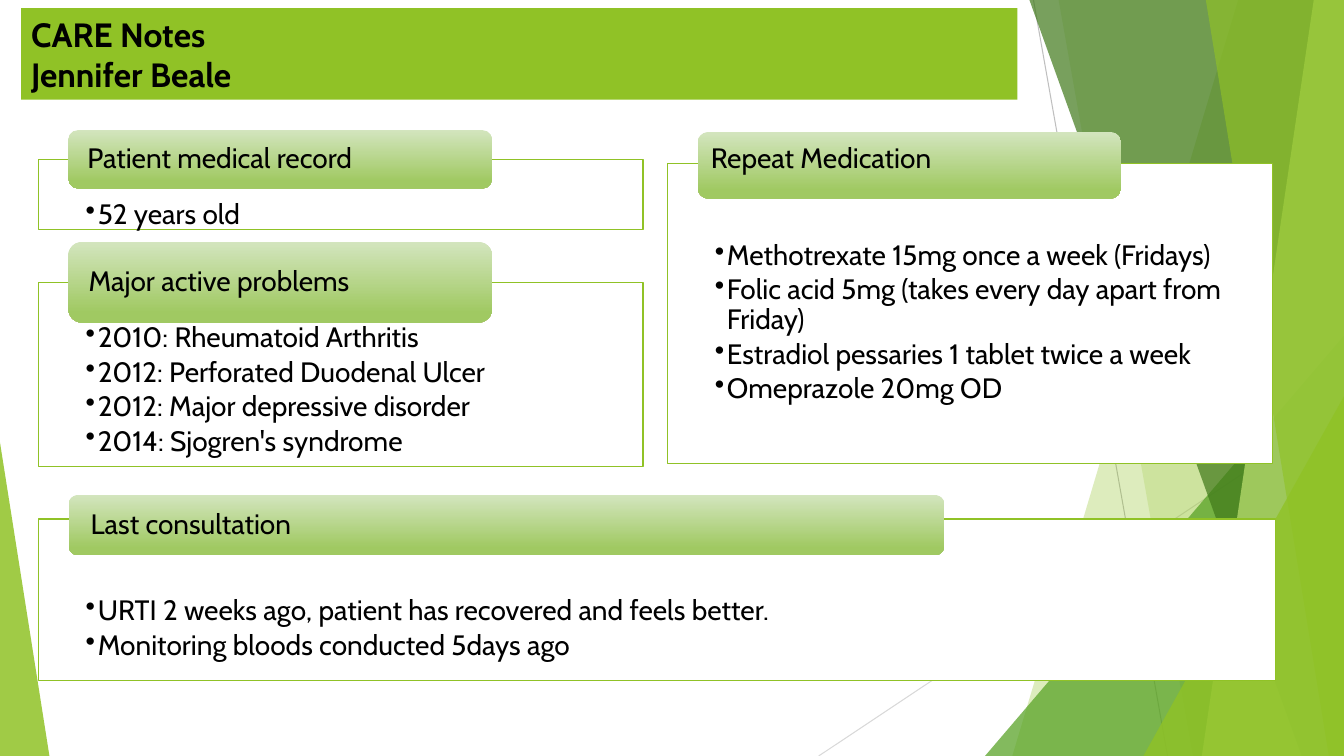
from lxml.etree import SubElement
from pptx import Presentation
from pptx.dml.color import RGBColor
from pptx.enum.shapes import MSO_CONNECTOR, MSO_SHAPE
from pptx.enum.text import MSO_ANCHOR, PP_ALIGN
from pptx.oxml.ns import qn
from pptx.util import Inches, Pt

W, H = 13.33, 7.5
FONT, GREEN, BLACK, WHITE = "Cabin", "90C226", "000000", "FFFFFF"
TITLE = ["CARE Notes", "Jennifer Beale"]

COL, STEP, COL_W, FULL_W = 0.38, 6.24, 6, 12.27
TAB_SHIFT = 0.3
PANELS = [
    dict(head="Patient medical record", box=(COL, 1.58, COL_W, 0.7), tab=(1.29, 0.58, 0.7),
         inset=0.16, gap=0.41, items=["52 years old"]),
    dict(head="Major active problems", box=(COL, 2.8, COL_W, 1.83), tab=(2.4, 0.8, 0.7),
         inset=0.16, gap=0.41,
         items=["2010: Rheumatoid Arthritis", "2012: Perforated Duodenal Ulcer",
                "2012: Major depressive disorder", "2014: Sjogren's syndrome"]),
    dict(head="Repeat Medication", box=(COL + STEP, 1.62, COL_W, 2.98), tab=(1.31, 0.66, 0.7),
         inset=0.1, gap=0.77, top=True,
         items=["Methotrexate 15mg once a week (Fridays)",
                "Folic acid 5mg (takes every day apart from Friday)",
                "Estradiol pessaries 1 tablet twice a week", "Omeprazole 20mg OD"]),
    dict(head="Last consultation", box=(COL, 5.15, FULL_W, 1.6), tab=(4.91, 0.6, 0.708),
         inset=0.19, gap=0.77,
         items=["URTI 2 weeks ago, patient has recovered and feels better.",
                "Monitoring bloods conducted 5days ago"]),
]

RAYS = [((10.25, 0), (11.58, H), "BFBFBF"), ((W, 4.03), (8.12, H), "D9D9D9")]
# Each facet: kind, geometry, colour, opacity in percent
FACETS = [
    ("band", (12.28, 10.04), GREEN, 30),
    ("band", (10.5, 11.83), GREEN, 20),
    ("triangle", (9.77, 3.33, 1), "54A021", 72),
    ("band", (10.21, 12.91), "3F7819", 70),
    ("band", (13.03, 11.92), "C0E474", 70),
    ("band", (11.96, 13.18), GREEN, 65),
    ("triangle", (11.34, 3.93, 1), GREEN, 80),
    ("triangle", (0, 4.39, 0), GREEN, 85),
]
LEFT_WEDGE_W = 0.49


def rgb(value):
    return RGBColor.from_string(value)


def paint(sp, fill, line=None, opacity=100):
    sp.shadow.inherit = False
    sp.fill.solid()
    sp.fill.fore_color.rgb = rgb(fill)
    if opacity < 100:
        color = sp._element.spPr.find(qn("a:solidFill"))[0]
        SubElement(color, qn("a:alpha"), val=str(opacity * 1000))
    if line:
        sp.line.color.rgb = rgb(line)
        sp.line.width = Pt(1)
    else:
        sp.line.fill.background()


def add_box(s, kind, x, y, w, h):
    return s.shapes.add_shape(kind, Inches(x), Inches(y), Inches(w), Inches(h))


def write(sp, lines, size, insets, anchor, bold=False, spacing=None, after=0, bullet=False):
    tf = sp.text_frame
    tf.word_wrap = True
    tf.vertical_anchor = anchor
    tf.margin_left, tf.margin_top, tf.margin_right, tf.margin_bottom = map(Inches, insets)
    for i, line in enumerate(lines):
        p = tf.add_paragraph() if i else tf.paragraphs[0]
        p.alignment = PP_ALIGN.LEFT
        p.space_after = Pt(after)
        if spacing:
            p.line_spacing = spacing
        if bullet:
            pPr = p._p.get_or_add_pPr()
            pPr.set("marL", str(Inches(0.12)))
            pPr.set("indent", str(-Inches(0.12)))
            SubElement(pPr, qn("a:buChar"), char="•")
        r = p.add_run()
        r.text = line
        r.font.name, r.font.size, r.font.bold = FONT, Pt(size), bold
        r.font.color.rgb = rgb(BLACK)


def add_backdrop(s):
    for (x1, y1), (x2, y2), color in RAYS:
        ray = s.shapes.add_connector(MSO_CONNECTOR.STRAIGHT, *map(Inches, (x1, y1, x2, y2)))
        ray.line.color.rgb = rgb(color)
        ray.line.width = Pt(0.75)
        SubElement(ray._element.spPr, qn("a:effectLst"))
    for kind, geometry, color, opacity in FACETS:
        if kind == "band":
            top, bottom = geometry
            fb = s.shapes.build_freeform(Inches(top), 0)
            corners = [(W, 0), (W, H), (bottom, H)]
            fb.add_line_segments([(Inches(x), Inches(y)) for x, y in corners], close=True)
            sp = fb.convert_to_shape()
        else:
            x, y, apex = geometry
            w = W - x if apex else LEFT_WEDGE_W
            sp = add_box(s, MSO_SHAPE.ISOSCELES_TRIANGLE, x, y, w, H - y)
            sp.adjustments[0] = apex
        paint(sp, color, opacity=opacity)


def add_panel(s, panel):
    x, y, w, h = panel["box"]
    sp = add_box(s, MSO_SHAPE.RECTANGLE, x, y, w, h)
    paint(sp, WHITE, GREEN)
    write(sp, panel["items"], 20, (0.47, panel["gap"], 0.47, 0), MSO_ANCHOR.TOP,
          spacing=0.9, after=3, bullet=True)

    tab_y, tab_h, share = panel["tab"]
    tab = add_box(s, MSO_SHAPE.ROUNDED_RECTANGLE, x + TAB_SHIFT, tab_y, w * share, tab_h)
    paint(tab, WHITE)
    tab.fill.gradient()
    tab.fill.gradient_angle = 270
    for stop, (pos, color) in zip(tab.fill.gradient_stops, [(0, "D3E5BE"), (0.88, "A0C962")]):
        stop.position = pos
        stop.color.rgb = rgb(color)
    top = panel.get("top", False)
    write(tab, [panel["head"]], 20, (panel["inset"], 0.05 if top else 0, 0.1, 0),
          MSO_ANCHOR.TOP if top else MSO_ANCHOR.MIDDLE, spacing=None if top else 0.9)


def main():
    """Build the patient notes slide and save it."""
    prs = Presentation()
    prs.slide_width, prs.slide_height = Inches(W), Inches(H)
    s = prs.slides.add_slide(prs.slide_layouts[6])
    add_backdrop(s)
    for panel in PANELS:
        add_panel(s, panel)
    banner = add_box(s, MSO_SHAPE.RECTANGLE, 0.21, 0.08, 9.88, 0.91)
    paint(banner, GREEN)
    write(banner, TITLE, 24, (0.1, 0.05, 0.1, 0.05), MSO_ANCHOR.MIDDLE, bold=True)
    prs.save("out.pptx")


if __name__ == "__main__":
    main()
